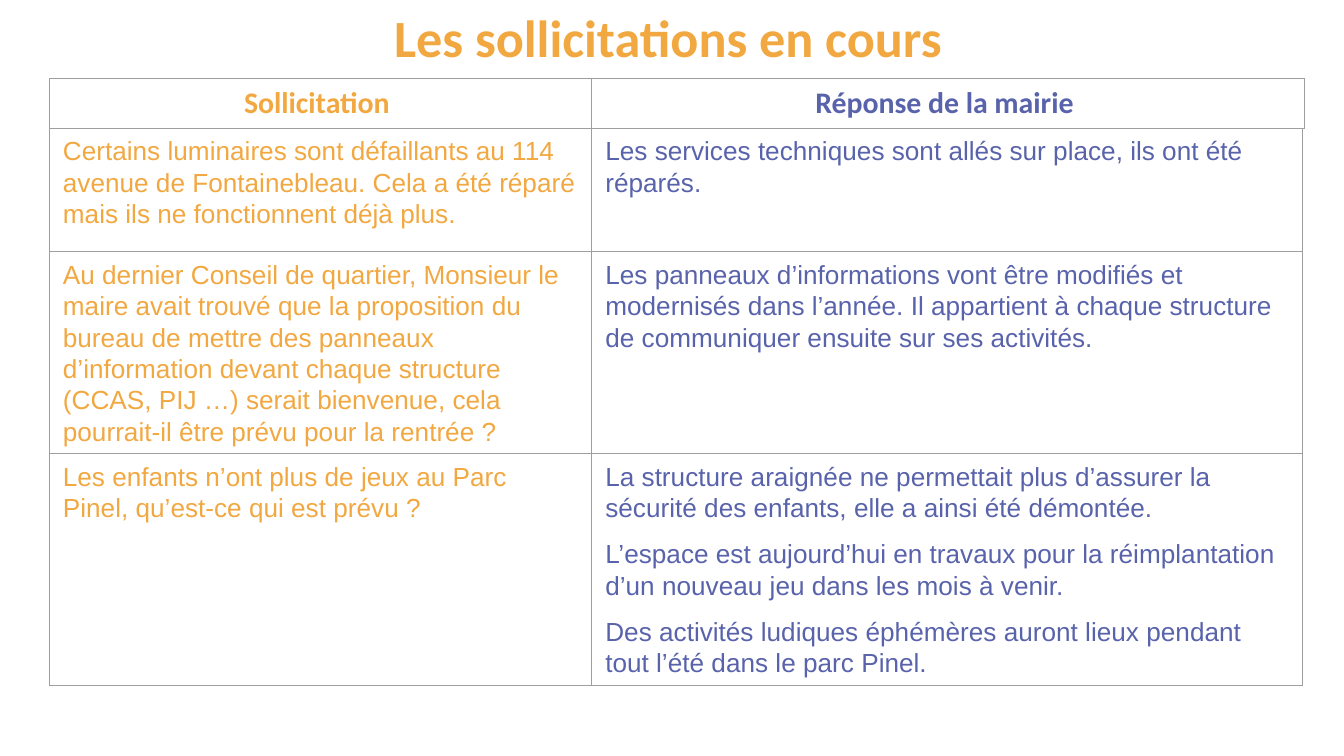
from dataclasses import dataclass

from pptx import Presentation
from pptx import oxml
from pptx.dml import color
from pptx.enum import text
from pptx.oxml import ns
from pptx.util import Pt


@dataclass(frozen=True)
class Theme:
    """Colours, fonts and type sizes of the deck."""
    request: str = "F2A841"
    answer: str = "5963AB"
    border: str = "9E9E9E"
    heading_font: str = "Calibri"
    body_font: str = "Arial"
    title_size: float = 28
    header_size: float = 16
    body_size: float = 14
    border_width: float = 0.75


THEME = Theme()
TITLE = "Les sollicitations en cours"
HEADERS = [["Sollicitation "], ["Réponse de la mairie "]]
EXCHANGES = [
    (
        ["Certains luminaires sont défaillants au 114 avenue de Fontainebleau. "
         "Cela a été réparé mais ils ne fonctionnent déjà plus."],
        ["Les services techniques sont allés sur place, ils ont été réparés."],
    ),
    (
        ["Au dernier Conseil de quartier, Monsieur le maire avait trouvé que la "
         "proposition du bureau de mettre des panneaux d’information devant chaque "
         "structure (CCAS, PIJ …) serait bienvenue, cela pourrait-il être prévu "
         "pour la rentrée ?"],
        ["Les panneaux d’informations vont être modifiés et modernisés dans l’année. "
         "Il appartient à chaque structure de communiquer ensuite sur ses activités."],
    ),
    (
        ["Les enfants n’ont plus de jeux au Parc Pinel, qu’est-ce qui est prévu ?"],
        ["La structure araignée ne permettait plus d’assurer la sécurité des enfants, "
         "elle a ainsi été démontée.",
         "L’espace est aujourd’hui en travaux pour la réimplantation d’un nouveau jeu "
         "dans les mois à venir.",
         "Des activités ludiques éphémères auront lieux pendant tout l’été dans le "
         "parc Pinel."],
    ),
]


def style_spans(para, font, size, colour, bold=False):
    """Format every run of a paragraph."""
    for span in para.runs:
        span.font.name = font
        span.font.size = Pt(size)
        span.font.bold = bold
        span.font.color.rgb = color.RGBColor.from_string(colour)


def draw_borders(cell):
    """Put a thin line on the four sides of a cell."""
    properties = cell._tc.get_or_add_tcPr()
    for index, side in enumerate(("lnL", "lnR", "lnT", "lnB")):
        line = oxml.parse_xml(
            f'<a:{side} {ns.nsdecls("a")} w="{Pt(THEME.border_width)}">'
            f'<a:solidFill><a:srgbClr val="{THEME.border}"/></a:solidFill></a:{side}>'
        )
        properties.insert(index, line)


def fill_cell(cell, lines, colour, header):
    """Write the paragraphs of one cell as a heading or as body text."""
    cell.fill.background()
    draw_borders(cell)
    cell.text_frame.text = "\n".join(lines)
    for para in cell.text_frame.paragraphs:
        if header:
            para.alignment = text.PP_ALIGN.CENTER
            style_spans(para, THEME.heading_font, THEME.header_size, colour, True)
        else:
            para.line_spacing = 1.07
            para.space_after = Pt(8)
            style_spans(para, THEME.body_font, THEME.body_size, colour)


def add_grid(page, left, top, widths, heights, rows, header=False):
    """Add a two-column table of requests and answers."""
    frame = page.shapes.add_table(
        len(rows), len(widths), Pt(left), Pt(top), Pt(sum(widths)), Pt(sum(heights))
    )
    table = frame.table
    table.first_row = header
    table.horz_banding = False
    for column, width in zip(table.columns, widths):
        column.width = Pt(width)
    for row, height, entries in zip(table.rows, heights, rows):
        row.height = Pt(height)
        for cell, lines, colour in zip(row.cells, entries, (THEME.request, THEME.answer)):
            fill_cell(cell, lines, colour, header)


def add_title(page, left, top, width, height):
    """Place and format the title placeholder."""
    box = page.shapes.title
    box.left, box.top, box.width, box.height = map(Pt, (left, top, width, height))
    frame = box.text_frame
    frame.text = TITLE
    frame.word_wrap = True
    frame.auto_size = text.MSO_AUTO_SIZE.NONE
    frame.vertical_anchor = text.MSO_ANCHOR.MIDDLE
    frame.margin_left = frame.margin_right = Pt(7.2)
    frame.margin_top = frame.margin_bottom = Pt(7.2)
    para = frame.paragraphs[0]
    para.alignment = text.PP_ALIGN.CENTER
    style_spans(para, THEME.heading_font, THEME.title_size, THEME.request, True)


def main():
    """Build and save the deck."""
    deck = Presentation()
    deck.slide_width, deck.slide_height = Pt(720), Pt(405)
    page = deck.slides.add_slide(deck.slide_layouts[5])
    add_title(page, 53.3, -2.9, 609, 45.4)
    add_grid(page, 26.5, 42.2, (290.2, 382.3), (26.7,), [HEADERS], header=True)
    add_grid(page, 26.5, 68.7, (290.6, 380.9), (66.2, 108, 124), EXCHANGES)
    deck.save("out.pptx")


if __name__ == "__main__":
    main()
